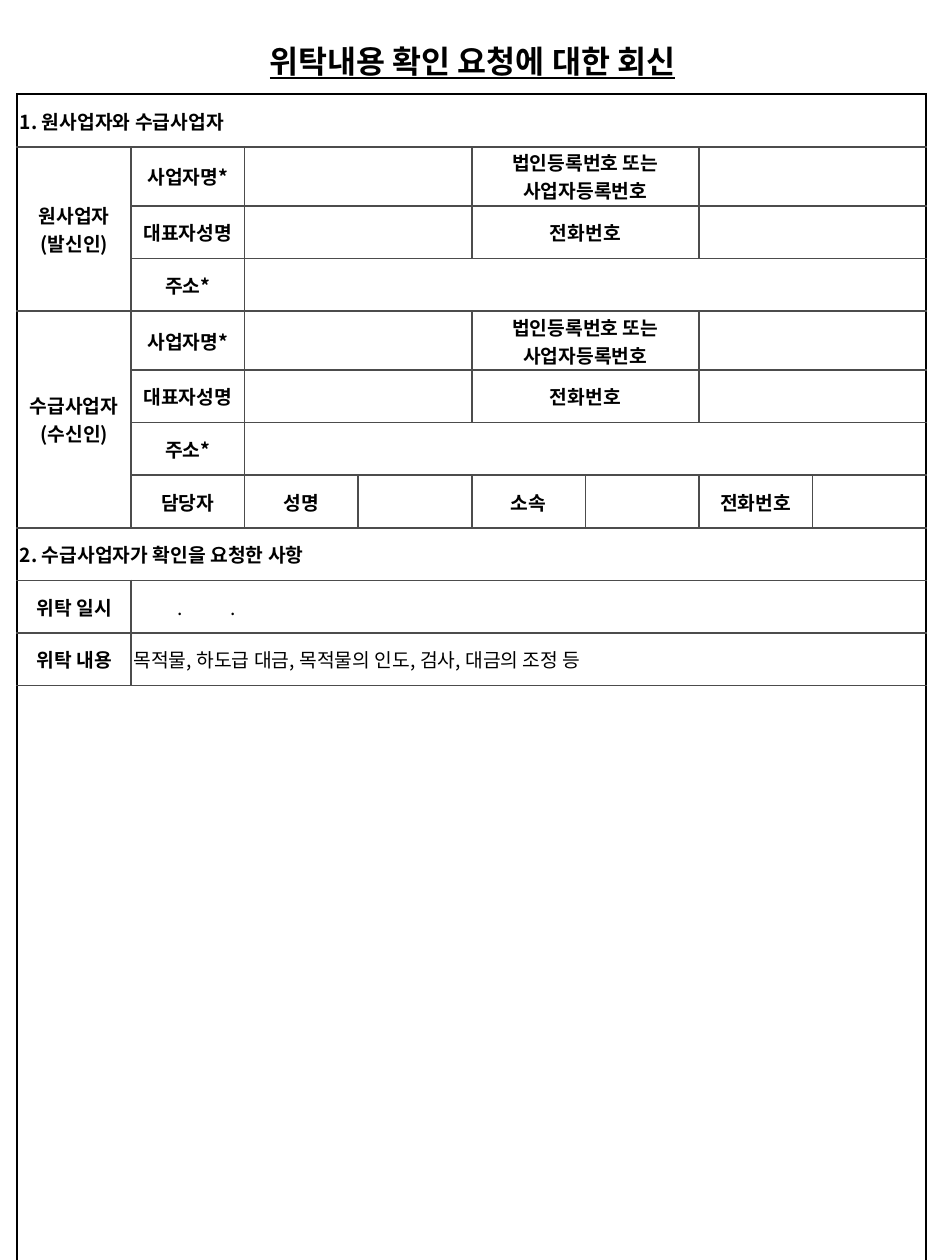
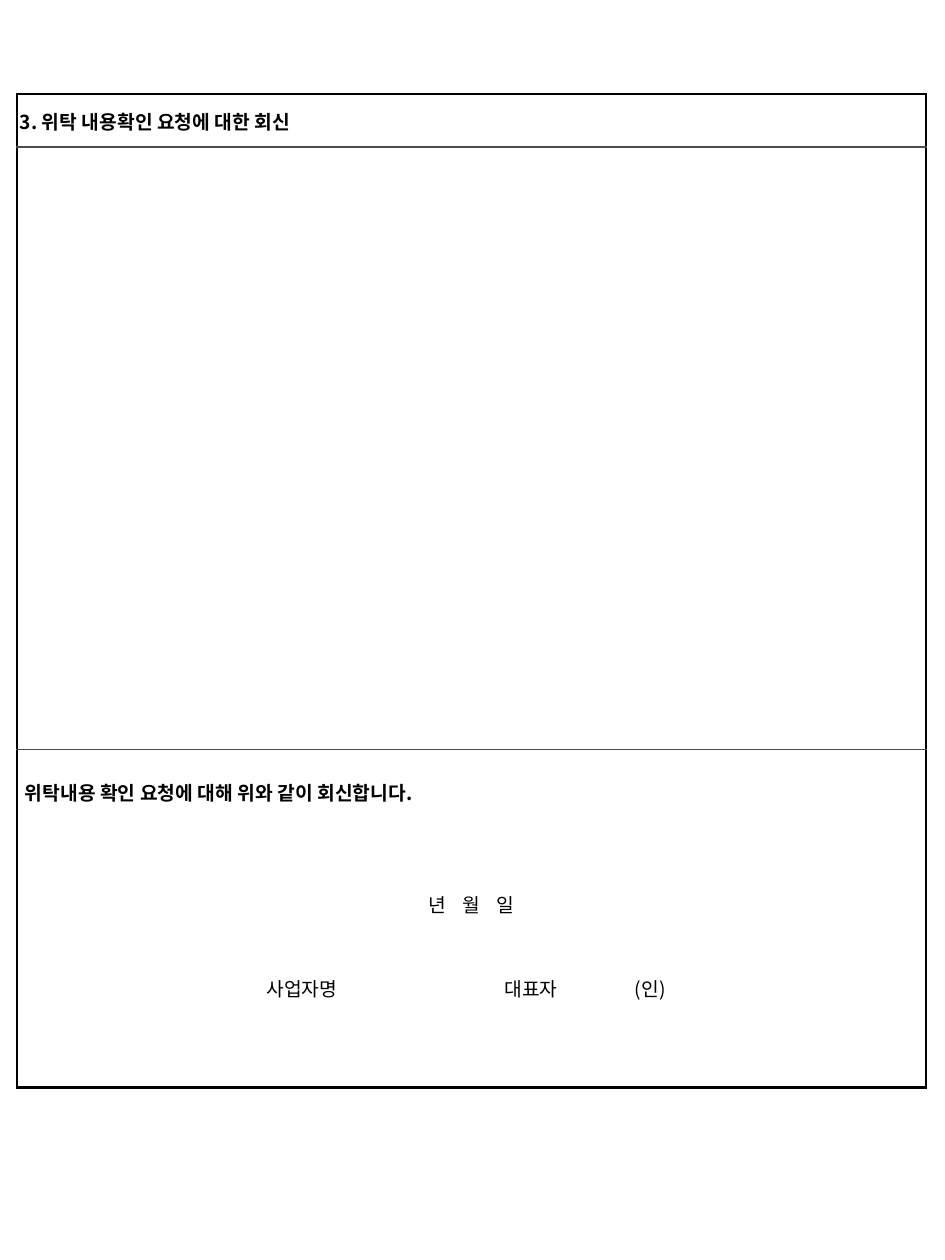
from itertools import product

from lxml.etree import SubElement
from pptx import Presentation
from pptx.dml.color import RGBColor
from pptx.enum.text import MSO_ANCHOR as Anchor, PP_ALIGN as Align
from pptx.oxml.ns import qn
from pptx.util import Cm, Pt

COLORS = {"ink": "000000", "grid": "4C4C4C", "paper": "FFFFFF"}
FONT = "Noto Sans CJK KR"
TITLE = {"size": Pt(18), "bold": True, "underline": True}
LABEL = {"size": Pt(11), "bold": True}
PLAIN = {"size": Pt(11), "bold": False}
CELL_MARGINS = {
    "margin_left": Cm(0.05), "margin_right": Cm(0.05),
    "margin_top": Cm(0.03), "margin_bottom": Cm(0.03),
    "vertical_anchor": Anchor.MIDDLE,
}
FRAME_LEFT, FRAME_TOP = 0.35, 1.9
COLUMN, ROW, TALL_ROW = 2.29, 1.06, 1.19


def assign(target, values):
    for name, value in values.items():
        setattr(target, name, value)


class Form:
    def __init__(self):
        self.deck = Presentation()
        assign(self.deck, {"slide_width": Cm(19.05), "slide_height": Cm(25.4)})
        self.page = None

    def add_page(self, layout):
        self.page = self.deck.slides.add_slide(self.deck.slide_layouts[layout])

    def set_text(self, paragraph, text, style, align=Align.LEFT, before=0, indent=0, tabs=()):
        assign(paragraph, {"alignment": align, "space_before": Pt(before)})
        properties = paragraph._p.get_or_add_pPr()
        properties.set("marL", str(Cm(indent)))
        if tabs:
            stops = SubElement(properties, qn("a:tabLst"))
            for position in tabs:
                SubElement(stops, qn("a:tab"), pos=str(Cm(position)), algn="l")
        span = paragraph.add_run()
        span.text = text
        assign(span.font, {"name": FONT, **style})
        span.font.color.rgb = RGBColor.from_string(COLORS["ink"])
        SubElement(span._r.get_or_add_rPr(), qn("a:ea"), typeface=FONT)

    def title(self, text):
        box = self.page.shapes.title
        assign(box, {"left": 0, "top": Cm(0.71), "width": self.deck.slide_width, "height": Cm(1.02)})
        assign(box.text_frame, {"vertical_anchor": Anchor.MIDDLE, "word_wrap": True})
        self.set_text(box.text_frame.paragraphs[0], text, TITLE, Align.CENTER)

    def table(self, columns, rows):
        frame = self.page.shapes.add_table(
            len(rows), len(columns), Cm(FRAME_LEFT), Cm(FRAME_TOP), Cm(sum(columns)), Cm(sum(rows)))
        self.grid = frame.table
        assign(self.grid, {"first_row": False, "horz_banding": False})
        for column, width in zip(self.grid.columns, columns):
            column.width = Cm(width)
        for row, height in zip(self.grid.rows, rows):
            row.height = Cm(height)

    def border(self, cell, side, outer):
        line = SubElement(cell._tc.get_or_add_tcPr(), qn(f"a:ln{side}"), w=str(Pt(1.5 if outer else 1)))
        fill = SubElement(line, qn("a:solidFill"))
        SubElement(fill, qn("a:srgbClr"), val=COLORS["ink" if outer else "grid"])

    def cell(self, row, column, lines=(), spans=(1, 1), style=LABEL, align=Align.CENTER, **options):
        last_row, last_column = row + spans[0] - 1, column + spans[1] - 1
        origin = self.grid.cell(row, column)
        if spans != (1, 1):
            origin.merge(self.grid.cell(last_row, last_column))
        assign(origin, CELL_MARGINS)
        bottom, right = len(self.grid.rows) - 1, len(self.grid.columns) - 1
        for y, x in product(range(row, last_row + 1), range(column, last_column + 1)):
            part = self.grid.cell(y, x)
            first = (y, x) == (row, column)
            edges = {
                "L": (x == column, column == 0),
                "R": (first or x == last_column, last_column == right),
                "T": (y == row, row == 0),
                "B": (first or y == last_row, last_row == bottom),
            }
            for side, (drawn, outer) in edges.items():
                if drawn:
                    self.border(part, side, outer)
            part.fill.solid()
            part.fill.fore_color.rgb = RGBColor.from_string(COLORS["paper"])
        for index, text in enumerate(lines):
            self.add_line(origin, index, text, style, align=align, **options)
        return origin

    def add_line(self, cell, index, text, style, **options):
        frame = cell.text_frame
        paragraph = frame.add_paragraph() if index else frame.paragraphs[0]
        self.set_text(paragraph, text, style, **options)

    def heading(self, row, text):
        self.cell(row, 0, [text], (1, len(self.grid.columns)), align=Align.LEFT)

    def party(self, row, names, row_count):
        self.cell(row, 0, names, (row_count, 1))
        pairs = [
            ("사업자명*", ["법인등록번호 또는", "사업자등록번호"]),
            ("대표자성명", ["전화번호"]),
        ]
        for offset, (left_label, right_label) in enumerate(pairs):
            self.cell(row + offset, 1, [left_label])
            self.cell(row + offset, 2, spans=(1, 2))
            self.cell(row + offset, 4, right_label, (1, 2))
            self.cell(row + offset, 6, spans=(1, 2))
        self.cell(row + 2, 1, ["주소*"])
        self.cell(row + 2, 2, spans=(1, 6))


def build_request_page(form):
    form.add_page(5)
    form.title("위탁내용 확인 요청에 대한 회신")
    heights = [TALL_ROW if row in (1, 4) else ROW for row in range(11)]
    form.table([COLUMN] * 8, heights + [11.7])
    form.heading(0, "1. 원사업자와 수급사업자")
    form.party(1, ["원사업자", "(발신인)"], 3)
    form.party(4, ["수급사업자", "(수신인)"], 4)
    form.cell(7, 1, ["담당자"])
    for column, label in zip((2, 4, 6), ("성명", "소속", "전화번호")):
        form.cell(7, column, [label])
        form.cell(7, column + 1)
    form.heading(8, "2. 수급사업자가 확인을 요청한 사항")
    details = [
        ("위탁 일시", "\t.\t.", (0.89, 1.95)),
        ("위탁 내용", "목적물, 하도급 대금, 목적물의 인도, 검사, 대금의 조정 등", ()),
    ]
    for row, (label, text, tabs) in enumerate(details, 9):
        form.cell(row, 0, [label])
        form.cell(row, 1, [text], (1, 7), PLAIN, Align.LEFT, tabs=tabs)
    form.cell(11, 0, spans=(1, 8))


def build_reply_page(form):
    form.add_page(6)
    form.table([COLUMN, COLUMN * 7], [ROW, 12.15, 6.81])
    form.heading(0, "3. 위탁 내용확인 요청에 대한 회신")
    form.cell(1, 0, spans=(1, 2))
    closing = form.cell(2, 0, spans=(1, 2))
    assign(closing, {"vertical_anchor": Anchor.TOP, "margin_top": Cm(0.58)})
    lines = [
        ("위탁내용 확인 요청에 대해 위와 같이 회신합니다.", LABEL, {"indent": 0.1}),
        ("\t년\t월\t일", PLAIN, {"before": 48, "tabs": (8.24, 8.93, 9.61)}),
        ("\t사업자명\t대표자\t(인)", PLAIN, {"before": 32, "tabs": (4.97, 9.77, 12.4)}),
    ]
    for index, (text, style, options) in enumerate(lines):
        form.add_line(closing, index, text, style, **options)


def main():
    form = Form()
    build_request_page(form)
    build_reply_page(form)
    form.deck.save("out.pptx")


if __name__ == "__main__":
    main()
